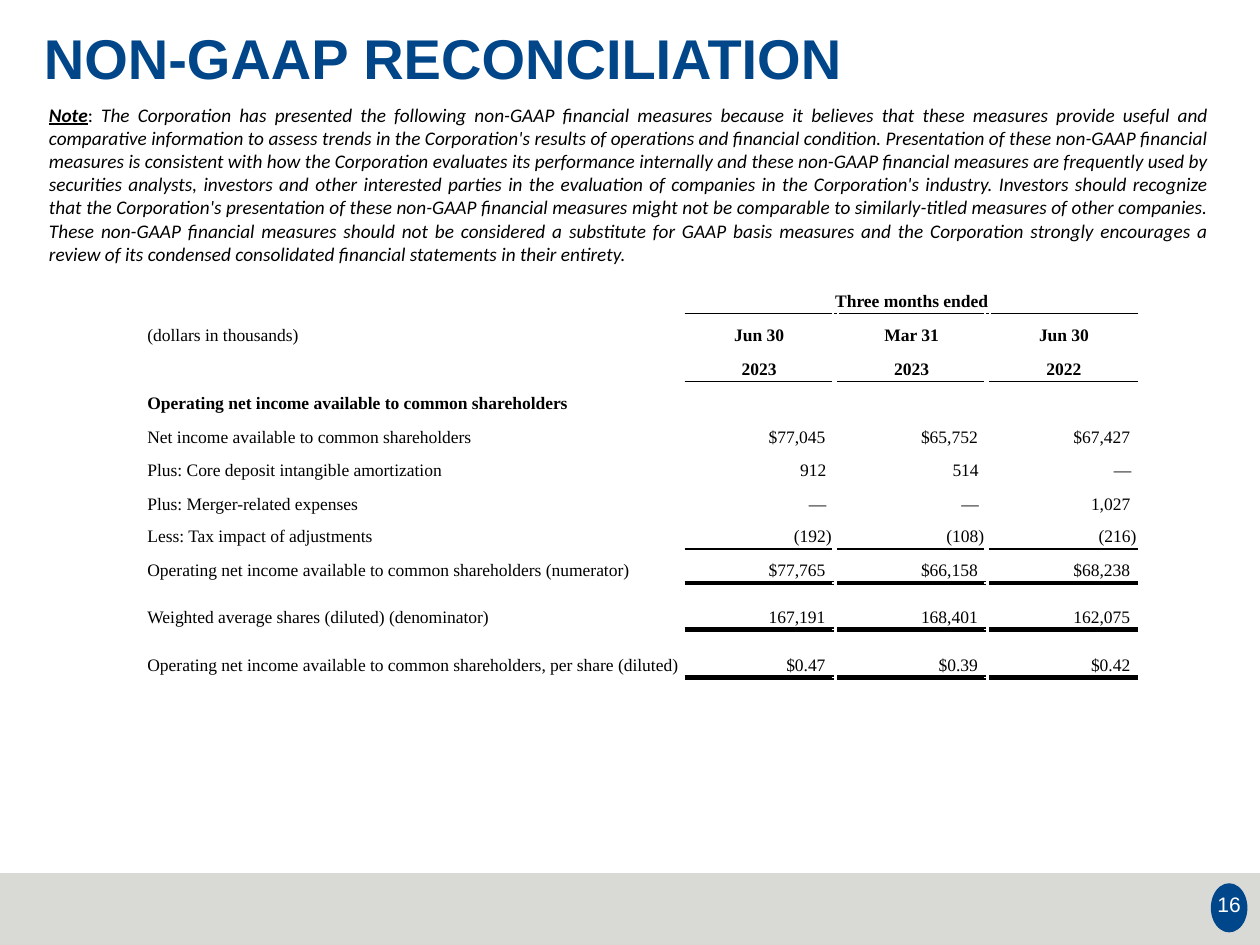
from lxml.etree import SubElement
from pptx import Presentation
from pptx.dml.color import RGBColor
from pptx.enum.shapes import MSO_SHAPE
from pptx.enum.text import MSO_ANCHOR, PP_ALIGN
from pptx.oxml.ns import qn
from pptx.util import Inches, Pt

BLACK = RGBColor(0x00, 0x00, 0x00)
WHITE = RGBColor(0xFF, 0xFF, 0xFF)
TITLE_BLUE = RGBColor(0x00, 0x46, 0x89)
BADGE_BLUE = RGBColor(0x00, 0x46, 0x8B)
FOOTER_GRAY = RGBColor(0xD9, 0xD9, 0xD6)

NOTE_SENTENCES = [
    "The Corporation has presented the following non-GAAP financial measures because it believes "
    "that these measures provide useful and comparative information to assess trends in the "
    "Corporation's results of operations and financial condition.",
    "Presentation of these non-GAAP financial measures is consistent with how the Corporation "
    "evaluates its performance internally and these non-GAAP financial measures are frequently used "
    "by securities analysts, investors and other interested parties in the evaluation of companies "
    "in the Corporation's industry.",
    "Investors should recognize that the Corporation's presentation of these non-GAAP financial "
    "measures might not be comparable to similarly-titled measures of other companies.",
    "These non-GAAP financial measures should not be considered a substitute for GAAP basis measures "
    "and the Corporation strongly encourages a review of its condensed consolidated financial "
    "statements in their entirety. ",
]
INCOME = "Operating net income available to common shareholders"
ROWS = [
    ("", "Three months ended"),
    ("(dollars in thousands)", "Jun 30", "Mar 31", "Jun 30"),
    ("", "2023", "2023", "2022"),
    (INCOME,),
    ("Net income available to common shareholders", "$77,045", "$65,752", "$67,427"),
    ("Plus: Core deposit intangible amortization", "912", "514", "—"),
    ("Plus: Merger-related expenses", "—", "—", "1,027"),
    ("Less: Tax impact of adjustments", "(192)", "(108)", "(216)"),
    (f"{INCOME} (numerator)", "$77,765", "$66,158", "$68,238"),
    (),
    ("Weighted average shares (diluted) (denominator)", "167,191", "168,401", "162,075"),
    (),
    (f"{INCOME}, per share (diluted)", "$0.47", "$0.39", "$0.42"),
    (),
    (),
]
HEADER_ROWS = 3
SECTION_ROW = 3
COLUMN_WIDTHS = [4.3, 1.17, 0.04, 1.17, 0.04, 1.17]
ROW_HEIGHTS = [0.26, 0.27, 0.27, 0.27, 0.27, 0.26, 0.27, 0.26,
               0.27, 0.11, 0.26, 0.11, 0.27, 0.26, 0.27]
RULES_BELOW = {0: 1, 2: 1, 7: 1, 8: 3, 10: 3, 12: 3}
TAB_BY_LENGTH = {7: 0.62, 5: 0.76, 3: 0.87, 1: 0.94}


def write_text(paragraph, text, font="Arial", size=12, color=BLACK, bold=False,
               italic=False, underline=False, align=PP_ALIGN.LEFT, spacing=1.0):
    paragraph.alignment = align
    paragraph.line_spacing = spacing
    run = paragraph.add_run()
    run.text = text
    run.font.name = font
    run.font.size = Pt(size)
    run.font.color.rgb = color
    run.font.bold = bold
    run.font.italic = italic
    run.font.underline = underline


def add_tabs(paragraph, positions):
    tab_list = SubElement(paragraph._p.get_or_add_pPr(), qn("a:tabLst"))
    for position in positions:
        SubElement(tab_list, qn("a:tab"), pos=str(Inches(position)), algn="l")


def rule_width(row, column):
    return RULES_BELOW.get(row, 0) if row == 0 and column or column % 2 else 0


def draw_borders(cell, row, column):
    properties = cell._tc.get_or_add_tcPr()
    widths = {"L": 0, "R": 0, "T": rule_width(row - 1, column), "B": rule_width(row, column)}
    for side, width in widths.items():
        line = SubElement(properties, qn(f"a:ln{side}"), w=str(Pt(width or 1)))
        fill = SubElement(line, qn("a:solidFill"))
        SubElement(fill, qn("a:srgbClr"), val=str(BLACK if width else WHITE))


def set_margins(target, left, top, right, bottom):
    target.margin_left, target.margin_top = Inches(left), Inches(top)
    target.margin_right, target.margin_bottom = Inches(right), Inches(bottom)


class ReconciliationSlide:
    table_font = {"font": "Times New Roman", "size": 10}

    def __init__(self, presentation):
        self.slide = presentation.slides.add_slide(presentation.slide_layouts[6])

    def add_shape(self, kind, left, top, width, height, color):
        shape = self.slide.shapes.add_shape(
            kind, Inches(left), Inches(top), Inches(width), Inches(height))
        shape.shadow.inherit = False
        shape.fill.solid()
        shape.fill.fore_color.rgb = color
        shape.line.fill.background()

    def add_text(self, left, top, width, height, anchor=MSO_ANCHOR.TOP):
        box = self.slide.shapes.add_textbox(
            Inches(left), Inches(top), Inches(width), Inches(height))
        frame = box.text_frame
        frame.word_wrap = True
        frame.vertical_anchor = anchor
        set_margins(frame, 0.1, 0.06, 0.1, 0.1)
        return frame.paragraphs[0]

    def add_table(self, left, top):
        table = self.slide.shapes.add_table(
            len(ROWS), len(COLUMN_WIDTHS), Inches(left), Inches(top),
            Inches(sum(COLUMN_WIDTHS)), Inches(sum(ROW_HEIGHTS))).table
        table.first_row = table.horz_banding = False
        for column, width in zip(table.columns, COLUMN_WIDTHS):
            column.width = Inches(width)
        for row, height in zip(table.rows, ROW_HEIGHTS):
            row.height = Inches(height)
        for row, texts in enumerate(ROWS):
            for column in range(len(COLUMN_WIDTHS)):
                index = (column + 1) // 2
                has_text = index < len(texts) and (column == 0 or column % 2)
                self.fill_cell(table.cell(row, column), row, column,
                               texts[index] if has_text else "")
        table.cell(0, 1).merge(table.cell(0, 5))

    def fill_cell(self, cell, row, column, text):
        draw_borders(cell, row, column)
        cell.fill.background()
        cell.vertical_anchor = MSO_ANCHOR.BOTTOM
        paragraph = cell.text_frame.paragraphs[0]
        if not text:
            set_margins(cell, 0, 0, 0, 0)
            paragraph._p.get_or_add_endParaRPr().set("sz", "200")
        elif column == 0 or row < HEADER_ROWS:
            set_margins(cell, 0.03, 0, 0.03, 0.02)
            write_text(paragraph, text, bold=column > 0 or row == SECTION_ROW,
                       align=PP_ALIGN.CENTER if column else PP_ALIGN.LEFT, **self.table_font)
        else:
            set_margins(cell, 0, 0, 0.01, 0.02)
            negative = text.startswith("(")
            write_text(paragraph, f"\t{text}" if negative else f"\t{text}\t",
                       align=PP_ALIGN.RIGHT, **self.table_font)
            add_tabs(paragraph, [0.82] if negative else [TAB_BY_LENGTH[len(text)], 1.12])


def main():
    presentation = Presentation()
    presentation.slide_width = Inches(10)
    presentation.slide_height = Inches(7.5)
    page = ReconciliationSlide(presentation)

    page.add_shape(MSO_SHAPE.RECTANGLE, 0, 6.93, 10, 0.57, FOOTER_GRAY)
    page.add_shape(MSO_SHAPE.OVAL, 9.61, 7.01, 0.29, 0.39, BADGE_BLUE)
    write_text(page.add_text(0.25, 0.19, 9.67, 1.14), "NON-GAAP RECONCILIATION",
               size=32, color=TITLE_BLUE, bold=True, spacing=0.9)
    write_text(page.add_text(9.52, 7, 0.47, 0.39, MSO_ANCHOR.MIDDLE), "16",
               color=WHITE, align=PP_ALIGN.CENTER)

    note = page.add_text(0.29, 0.76, 9.41, 1.4)
    note_format = {"font": "Calibri", "size": 11, "align": PP_ALIGN.JUSTIFY}
    write_text(note, "Note", bold=True, italic=True, underline=True, **note_format)
    write_text(note, ": ", **note_format)
    write_text(note, " ".join(NOTE_SENTENCES), italic=True, **note_format)

    page.add_table(1.14, 2.23)
    presentation.save("out.pptx")


if __name__ == "__main__":
    main()
